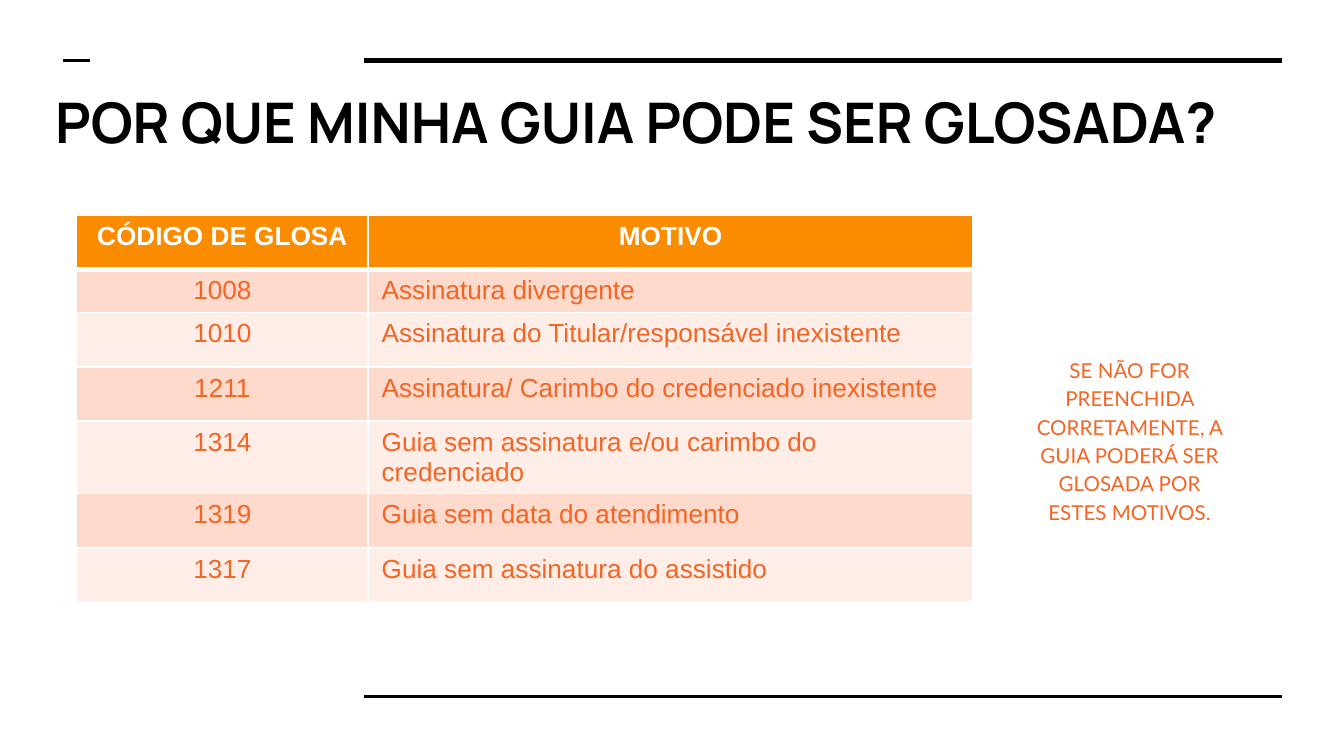
from lxml import etree
from pptx import Presentation
from pptx.dml.color import RGBColor
from pptx.enum.shapes import MSO_CONNECTOR as Connector, MSO_SHAPE as Shape
from pptx.enum.text import MSO_ANCHOR as Anchor, MSO_AUTO_SIZE as AutoSize, PP_ALIGN as Align
from pptx.oxml.ns import qn
from pptx.util import Inches, Pt

BLACK = RGBColor(0x00, 0x00, 0x00)
WHITE = RGBColor(0xFF, 0xFF, 0xFF)
AMBER = RGBColor(0xFB, 0x8C, 0x00)
ORANGE = RGBColor(0xF4, 0x65, 0x24)
PEACH = RGBColor(0xFD, 0xDA, 0xCC)
PALE_PEACH = RGBColor(0xFE, 0xEE, 0xE7)


def style_text(paragraph, font_name, size, color, align, bold=False):
    paragraph.alignment = align
    for run in paragraph.runs:
        run.font.name = font_name
        run.font.size = Pt(size)
        run.font.color.rgb = color
        run.font.bold = bold


def add_borders(cell, bottom_width):
    properties = cell._tc.get_or_add_tcPr()
    widths = {"a:lnL": 1, "a:lnR": 1, "a:lnT": 1, "a:lnB": bottom_width}
    for position, (tag, width) in enumerate(widths.items()):
        border = etree.Element(qn(tag), w=str(Pt(width)))
        fill = etree.SubElement(border, qn("a:solidFill"))
        etree.SubElement(fill, qn("a:srgbClr"), val=str(WHITE))
        properties.insert(position, border)


deck = Presentation()
deck.slide_width, deck.slide_height = Inches(10), Inches(10 * 9 / 16)
slide = deck.slides.add_slide(deck.slide_layouts[5])

for start, end, y, weight in [(2.71, 9.54, 0.45, 3), (2.71, 9.54, 5.18, 1.5), (0.47, 0.67, 0.45, 1.5)]:
    rule = slide.shapes.add_connector(
        Connector.STRAIGHT, Inches(start), Inches(y), Inches(end), Inches(y))
    rule.line.color.rgb = BLACK
    rule.line.width = Pt(weight)
    etree.SubElement(rule._element.spPr, qn("a:effectLst"))

title = slide.shapes.title
title.left, title.top = Inches(0.31), Inches(0.55)
title.width, title.height = Inches(9.23), Inches(0.69)
heading = title.text_frame
heading.text = "POR QUE MINHA GUIA PODE SER GLOSADA?"
heading.word_wrap = True
heading.auto_size = AutoSize.NONE
heading.vertical_anchor = Anchor.TOP
heading.margin_left = heading.margin_right = Inches(0.1)
heading.margin_top = heading.margin_bottom = Inches(0.1)
style_text(heading.paragraphs[0], "Manrope", 30, BLACK, Align.LEFT, bold=True)

warning = slide.shapes.add_shape(
    Shape.RECTANGLE, Inches(7.58), Inches(2.24), Inches(1.65), Inches(1.97))
warning.shadow.inherit = False
warning.fill.solid()
warning.fill.fore_color.rgb = WHITE
warning.line.color.rgb = WHITE
warning.line.width = Pt(0.75)
message = warning.text_frame
message.text = "SE NÃO FOR PREENCHIDA CORRETAMENTE, A GUIA PODERÁ SER GLOSADA POR ESTES MOTIVOS."
message.word_wrap = True
message.vertical_anchor = Anchor.BOTTOM
message.margin_left = message.margin_right = message.margin_top = Inches(0.1)
message.margin_bottom = Inches(0.31)
message.paragraphs[0].line_spacing = 1.15
style_text(message.paragraphs[0], "Lato", 11, ORANGE, Align.CENTER)

reasons = [
    ("CÓDIGO DE GLOSA", "MOTIVO"),
    ("1008", "Assinatura divergente"),
    ("1010", "Assinatura do Titular/responsável inexistente"),
    ("1211", "Assinatura/ Carimbo do credenciado inexistente"),
    ("1314", "Guia sem assinatura e/ou carimbo do credenciado"),
    ("1319", "Guia sem data do atendimento "),
    ("1317", "Guia sem assinatura do assistido"),
]
row_height = Inches(2.43 / 6)
table = slide.shapes.add_table(
    len(reasons), 2, Inches(0.57), Inches(1.6), Inches(6.67), Inches(2.93)).table
table.columns[0].width = Inches(2.17)
table.columns[1].width = Inches(4.5)

for row, (code, reason) in enumerate(reasons):
    table.rows[row].height = Inches(0.32) if row == 1 else row_height
    is_header = row == 0
    band = AMBER if is_header else PEACH if row % 2 else PALE_PEACH
    for column, content in enumerate((code, reason)):
        cell = table.cell(row, column)
        cell.text_frame.text = content
        cell.fill.solid()
        cell.fill.fore_color.rgb = band
        add_borders(cell, 3 if is_header else 1)
        align = Align.CENTER if is_header or column == 0 else Align.LEFT
        style_text(cell.text_frame.paragraphs[0], "Arial", 14,
                   WHITE if is_header else ORANGE, align, bold=is_header)

deck.save("out.pptx")
